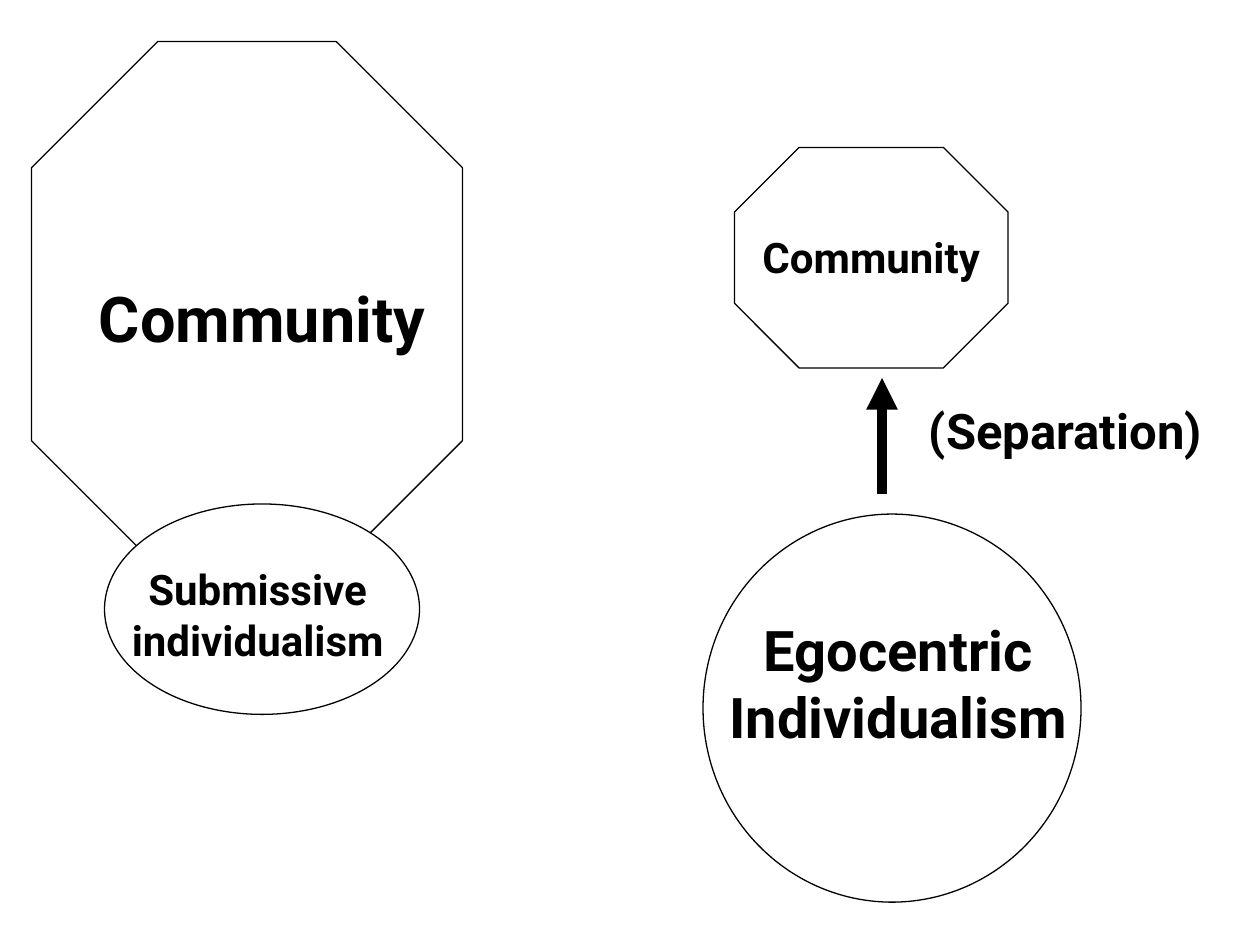
from typing import NamedTuple

from pptx import Presentation
from pptx.dml.color import RGBColor
from pptx.enum.shapes import MSO_CONNECTOR, MSO_SHAPE as Geo
from pptx.enum.text import MSO_ANCHOR as Anchor, MSO_AUTO_SIZE as AutoSize, PP_ALIGN
from pptx.oxml.ns import qn
from pptx.util import Inches, Pt

BLACK, WHITE = "000000", "FFFFFF"


class Box(NamedTuple):
    left: float
    top: float
    width: float
    height: float


class Outline(NamedTuple):
    geo: Geo
    box: Box
    filled: bool = True


class Label(NamedTuple):
    lines: tuple[str, ...]
    box: Box
    size: int
    wrap: bool = False
    anchor: Anchor = Anchor.MIDDLE
    autosize: AutoSize = AutoSize.NONE
    filled: bool = False


OUTLINES = [
    Outline(Geo.OCTAGON, Box(0.25, 0.33, 3.42, 4.17)),
    Outline(Geo.OCTAGON, Box(5.83, 1.17, 2.17, 1.75)),
    Outline(Geo.OVAL, Box(0.83, 4, 2.5, 1.67)),
    Outline(Geo.OVAL, Box(5.58, 4.08, 3, 3.08), filled=False),
]
LABELS = [
    Label(("Community",), Box(0.33, 2.17, 3.5, 0.7), 36, wrap=True,
          anchor=Anchor.TOP, autosize=AutoSize.SHAPE_TO_FIT_TEXT),
    Label(("Community",), Box(6.08, 1.75, 1.67, 0.58), 24),
    Label(("Egocentric", "Individualism"), Box(5.92, 4.92, 2.42, 1), 32),
    Label(("Submissive", "individualism"), Box(1.17, 4.5, 1.75, 0.75), 24, filled=True),
    Label(("(Separation)",), Box(7.33, 3.25, 2.25, 0.33), 28),
]


def rgb(value: str) -> RGBColor:
    return RGBColor.from_string(value)


def fill_white(shape, filled: bool) -> None:
    if filled:
        shape.fill.solid()
        shape.fill.fore_color.rgb = rgb(WHITE)
    else:
        shape.fill.background()


def draw_outline(s, outline: Outline) -> None:
    sp = s.shapes.add_shape(outline.geo, *map(Inches, outline.box))
    sp.shadow.inherit = False
    fill_white(sp, outline.filled)
    sp.line.color.rgb = rgb(BLACK)
    sp.line.width = Pt(0.75)


def draw_label(s, label: Label) -> None:
    sp = s.shapes.add_textbox(*map(Inches, label.box))
    fill_white(sp, label.filled)
    tf = sp.text_frame
    frame = {"word_wrap": label.wrap, "vertical_anchor": label.anchor,
             "auto_size": label.autosize}
    for name, value in frame.items():
        setattr(tf, name, value)
    font = {"name": "Roboto", "size": Pt(label.size), "bold": True}
    for i, line in enumerate(label.lines):
        p = tf.add_paragraph() if i else tf.paragraphs[0]
        p.alignment = PP_ALIGN.CENTER
        r = p.add_run()
        r.text = line
        for name, value in font.items():
            setattr(r.font, name, value)
        r.font.color.rgb = rgb(BLACK)


def draw_arrow(s, x: float, start: float, end: float) -> None:
    """Draw a thick vertical arrow with its head at end."""
    line = s.shapes.add_connector(
        MSO_CONNECTOR.STRAIGHT, Inches(x), Inches(start), Inches(x), Inches(end))
    line.line.color.rgb = rgb(BLACK)
    line.line.width = Pt(6)
    ln = line.line._get_or_add_ln()
    ln.append(ln.makeelement(qn("a:tailEnd"), {"type": "triangle"}))
    props = line._element.spPr
    props.append(props.makeelement(qn("a:effectLst"), {}))


def main() -> None:
    prs = Presentation()
    prs.slide_width, prs.slide_height = Inches(10), Inches(7.5)
    s = prs.slides.add_slide(prs.slide_layouts[6])
    for outline in OUTLINES:
        draw_outline(s, outline)
    draw_arrow(s, 7, 3.92, 3)
    for label in LABELS:
        draw_label(s, label)
    prs.save("out.pptx")


if __name__ == "__main__":
    main()
